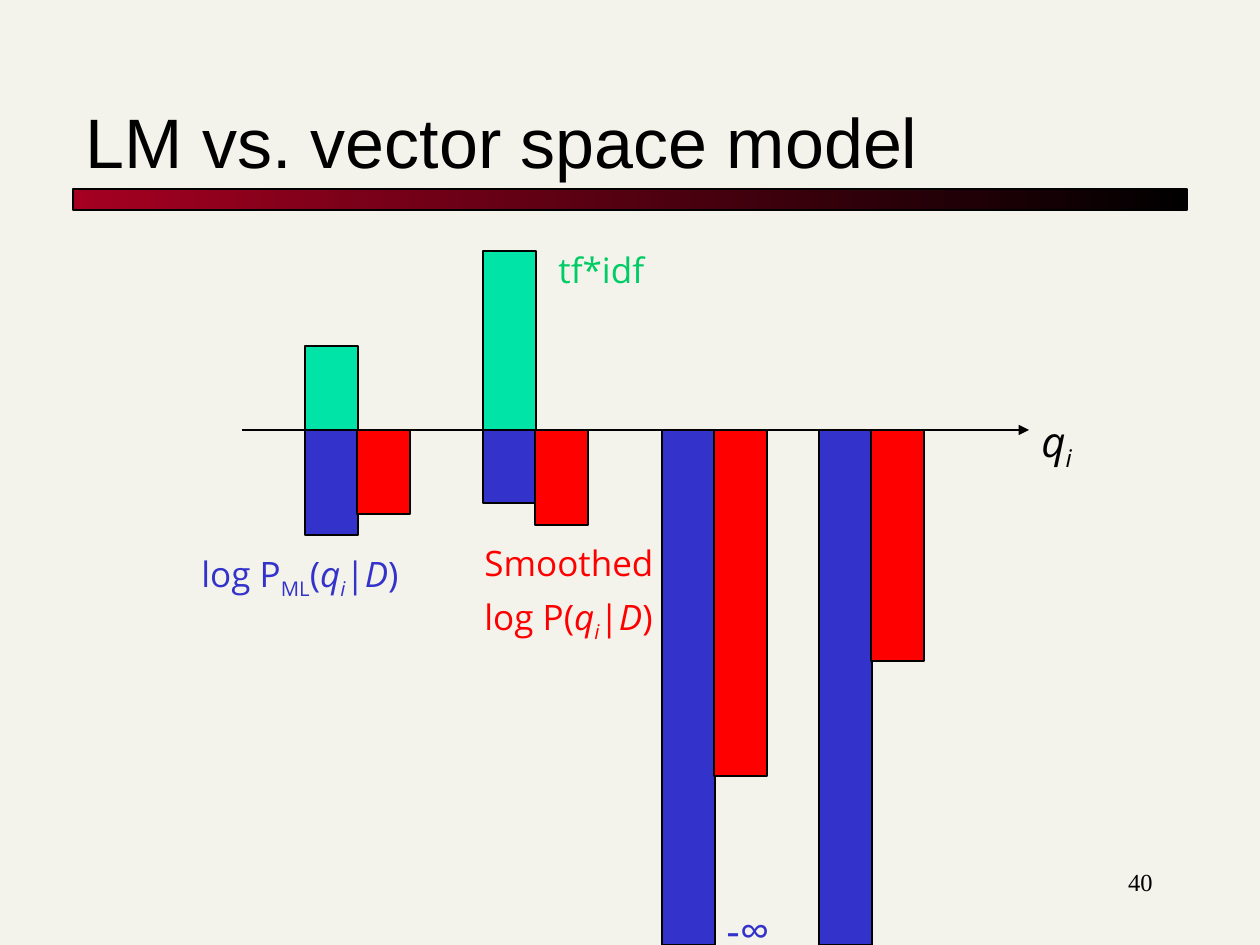
from lxml.etree import SubElement
from pptx import Presentation
from pptx.dml.color import RGBColor
from pptx.enum.shapes import MSO_CONNECTOR, MSO_SHAPE
from pptx.enum.text import MSO_ANCHOR, PP_ALIGN
from pptx.oxml.ns import qn
from pptx.util import Pt

PX = 914400 / 126  # EMU per px

BACKGROUND = RGBColor(0xF4, 0xF3, 0xEB)
BLACK = RGBColor(0x00, 0x00, 0x00)
CRIMSON = RGBColor(0xA5, 0x00, 0x21)
MINT = RGBColor(0x00, 0xE4, 0xA8)
GREEN = RGBColor(0x00, 0xCC, 0x66)
BLUE = RGBColor(0x33, 0x33, 0xCC)
RED = RGBColor(0xFF, 0x00, 0x00)

# Content: a run is (text, style), where style may hold "italic" and "sub"
TITLE = "LM vs. vector space model"
QUERY_TERM = [("q", "italic"), ("i", "italic sub")]
GIVEN_DOCUMENT = [("(", ""), *QUERY_TERM, ("|", ""), ("D", "italic"), (")", "")]
LABELS = [  # left, top, width, height, size, colour, paragraphs
    (1029, 409, 71, 47, 24, BLACK, [QUERY_TERM]),
    (714, 898, 71, 47, 24, BLUE, [[("-∞", "")]]),
    (189, 546, 242, 55, 20, BLUE, [[("log P", ""), ("ML", "sub"), *GIVEN_DOCUMENT]]),
    (546, 242, 147, 55, 20, GREEN, [[("tf*idf", "")]]),
    (472, 535, 201, 118, 20, RED,
     [[("Smoothed", "")], [("log P", ""), *GIVEN_DOCUMENT]]),
]

# Bars: one height per query term, in px; negative hangs below the axis
AXIS_Y, AXIS_LEFT, AXIS_RIGHT = 430, 242, 1029
TERM_LEFTS = [305, 483, 662, 819]
BAR_WIDTH, BAR_STEP = 53, 52
SERIES = [  # colour, column within the term, heights
    (MINT, 0, [84, 179, 0, 0]),
    (BLUE, 0, [-105, -73, -515, -515]),
    (RED, 1, [-84, -95, -346, -231]),
]


def px(*lengths):
    return [round(length * PX) for length in lengths]


def write_text(frame, paragraphs, *, size, color=BLACK, font="Open Sans",
               align=PP_ALIGN.LEFT, anchor=MSO_ANCHOR.TOP, gap=7):
    frame.word_wrap = True
    frame.vertical_anchor = anchor
    for index, runs in enumerate(paragraphs):
        paragraph = frame.add_paragraph() if index else frame.paragraphs[0]
        paragraph.alignment = align
        paragraph.space_before = Pt(gap if index else 0)
        for text, style in runs:
            run = paragraph.add_run()
            run.text = text
            run.font.name = font
            run.font.size = Pt(size)
            run.font.color.rgb = color
            run.font.italic = "italic" in style
            if "sub" in style:
                run.font._element.set("baseline", "-25000")


def add_box(slide, left, top, width, height):
    shape = slide.shapes.add_shape(MSO_SHAPE.RECTANGLE, *px(left, top, width, height))
    shape.shadow.inherit = False
    shape.line.color.rgb = BLACK
    shape.line.width = Pt(0.75)
    return shape


def add_axis(slide):
    axis = slide.shapes.add_connector(
        MSO_CONNECTOR.STRAIGHT, *px(AXIS_LEFT, AXIS_Y, AXIS_RIGHT, AXIS_Y))
    axis.line.color.rgb = BLACK
    axis.line.width = Pt(0.75)
    SubElement(axis.line._get_or_add_ln(), qn("a:tailEnd"), type="triangle")
    SubElement(axis._element.spPr, qn("a:effectLst"))


def main():
    presentation = Presentation()
    presentation.slide_width, presentation.slide_height = px(1260, 945)
    slide = presentation.slides.add_slide(presentation.slide_layouts[5])
    slide.background.fill.solid()
    slide.background.fill.fore_color.rgb = BACKGROUND

    # Title and the gradient rule below it
    title = slide.shapes.title
    title.left, title.top, title.width, title.height = px(73, 53, 1113, 136)
    write_text(title.text_frame, [[(TITLE, "")]], size=40, font="Arial",
               anchor=MSO_ANCHOR.BOTTOM)
    rule = add_box(slide, 73, 189, 1114, 21)
    rule.fill.gradient()
    rule.fill.gradient_angle = 0
    for stop, color, position in zip(rule.fill.gradient_stops, (CRIMSON, BLACK), (0, 1)):
        stop.color.rgb = color
        stop.position = position

    # Axis and bars
    add_axis(slide)
    for color, column, heights in SERIES:
        for term_left, height in zip(TERM_LEFTS, heights):
            if height:
                bar = add_box(slide, term_left + column * BAR_STEP,
                              AXIS_Y - max(height, 0), BAR_WIDTH, abs(height))
                bar.fill.solid()
                bar.fill.fore_color.rgb = color

    # Labels and page number
    for *place, size, color, paragraphs in LABELS:
        label = slide.shapes.add_textbox(*px(*place))
        write_text(label.text_frame, paragraphs, size=size, color=color)
    number = slide.shapes.add_textbox(*px(903, 861, 262, 63))
    write_text(number.text_frame, [[("40", "")]], size=14, font="Times New Roman",
               align=PP_ALIGN.RIGHT)

    presentation.save("out.pptx")


if __name__ == "__main__":
    main()
